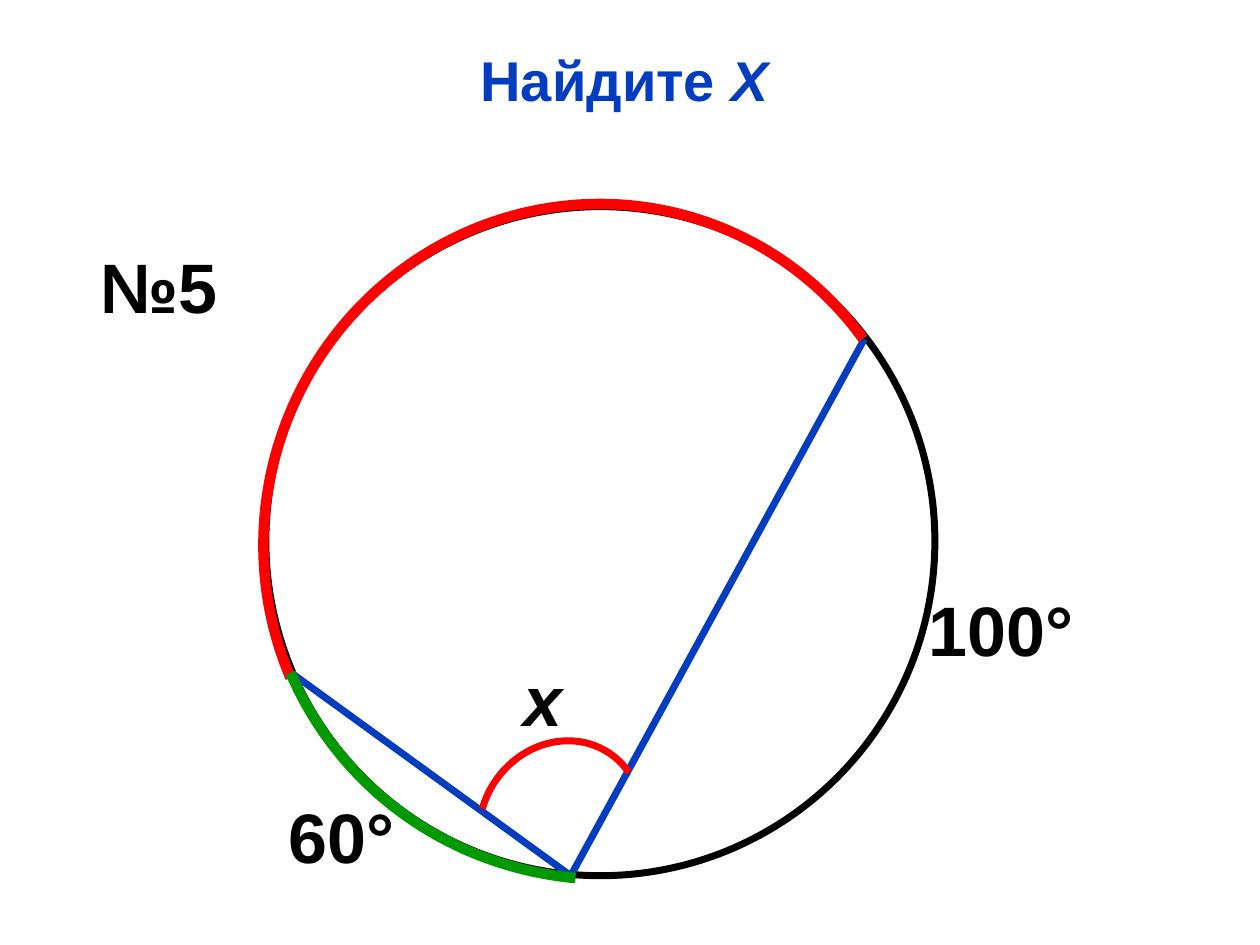
from pptx import Presentation
from pptx.dml.color import RGBColor
from pptx.enum.shapes import MSO_CONNECTOR, MSO_SHAPE
from pptx.enum.text import MSO_ANCHOR, MSO_AUTO_SIZE, PP_ALIGN
from pptx.oxml.ns import qn
from pptx.util import Emu, Pt

PX = 9144  # 100 px to the inch
BLACK, WHITE, BLUE, RED, GREEN = "000000", "FFFFFF", "033DBF", "FF0000", "009900"


def px(*lengths):
    return [Emu(n * PX) for n in lengths]


def rgb(hex_color):
    return RGBColor.from_string(hex_color)


def set_line(s, color, width):
    s.line.color.rgb = rgb(color)
    s.line.width = Pt(width)


def set_font(p, size, color, italic=None):
    f = p.font
    f.name, f.size, f.bold, f.italic = "Arial", Pt(size), True, italic
    f.color.rgb = rgb(color)


def add_title(slide, box):
    s = slide.shapes.title
    s.left, s.top, s.width, s.height = px(*box)
    tf = s.text_frame
    tf.word_wrap = True
    tf.auto_size = MSO_AUTO_SIZE.NONE
    tf.vertical_anchor = MSO_ANCHOR.TOP
    p = tf.paragraphs[0]
    p.alignment = PP_ALIGN.CENTER
    set_font(p, 32, BLUE)
    p.add_run().text = "Найдите "
    variable = p.add_run()
    variable.text = "Х"
    variable.font.italic = True


def add_label(slide, text, box, italic=None, wrap=True):
    tf = slide.shapes.add_textbox(*px(*box)).text_frame
    tf.word_wrap = wrap
    p = tf.paragraphs[0]
    p.text = text
    set_font(p, 40, BLACK, italic)


def add_chord(slide, start, end):
    s = slide.shapes.add_connector(MSO_CONNECTOR.STRAIGHT, *px(*start, *end))
    set_line(s, BLUE, 4)
    sp_pr = s._element.spPr
    sp_pr.append(sp_pr.makeelement(qn("a:effectLst"), {}))


def add_arc(slide, box, rotation, adjustments, color, width):
    s = slide.shapes.add_shape(MSO_SHAPE.ARC, *px(*box))
    s.shadow.inherit = False
    s.fill.background()
    set_line(s, color, width)
    s.rotation = rotation
    for i, value in enumerate(adjustments):
        s.adjustments[i] = value


def add_inscribed_angle(slide, box):
    """Circle filling the box, with two chords, three arcs and their labels."""
    x, y, w, h = box

    def at(dx, dy, *size):
        return (x + dx, y + dy, *size)

    circle = slide.shapes.add_shape(MSO_SHAPE.OVAL, *px(*box))
    circle.shadow.inherit = False
    circle.fill.solid()
    circle.fill.fore_color.rgb = rgb(WHITE)
    set_line(circle, BLACK, 4)

    vertex = at(242, h)
    for end in [at(475, 105), at(16, 367)]:
        add_chord(slide, vertex, end)

    add_arc(slide, at(171, 422, 126, 139), 213.1, (203.67, 65.29), RED, 4)
    add_label(slide, "60°", at(8, 461, 133, 77))
    add_label(slide, "100°", at(516, 297, 136, 77), wrap=False)
    add_label(slide, "x", at(195, 352, 78, 77), italic=True)
    add_arc(slide, at(-1, -3, 524, 535), 203.7, (187.14, 71.66), RED, 6)
    add_arc(slide, at(4, -49, 563, 590), 45.7, (31.32, 65.58), GREEN, 6)


def main():
    prs = Presentation()
    prs.slide_width, prs.slide_height = px(1000, 750)
    slide = prs.slides.add_slide(prs.slide_layouts[5])
    add_title(slide, (62, 31, 867, 64))
    add_inscribed_angle(slide, (211, 164, 531, 531))
    add_label(slide, "№5", (70, 188, 164, 77))
    prs.save("out.pptx")


if __name__ == "__main__":
    main()
